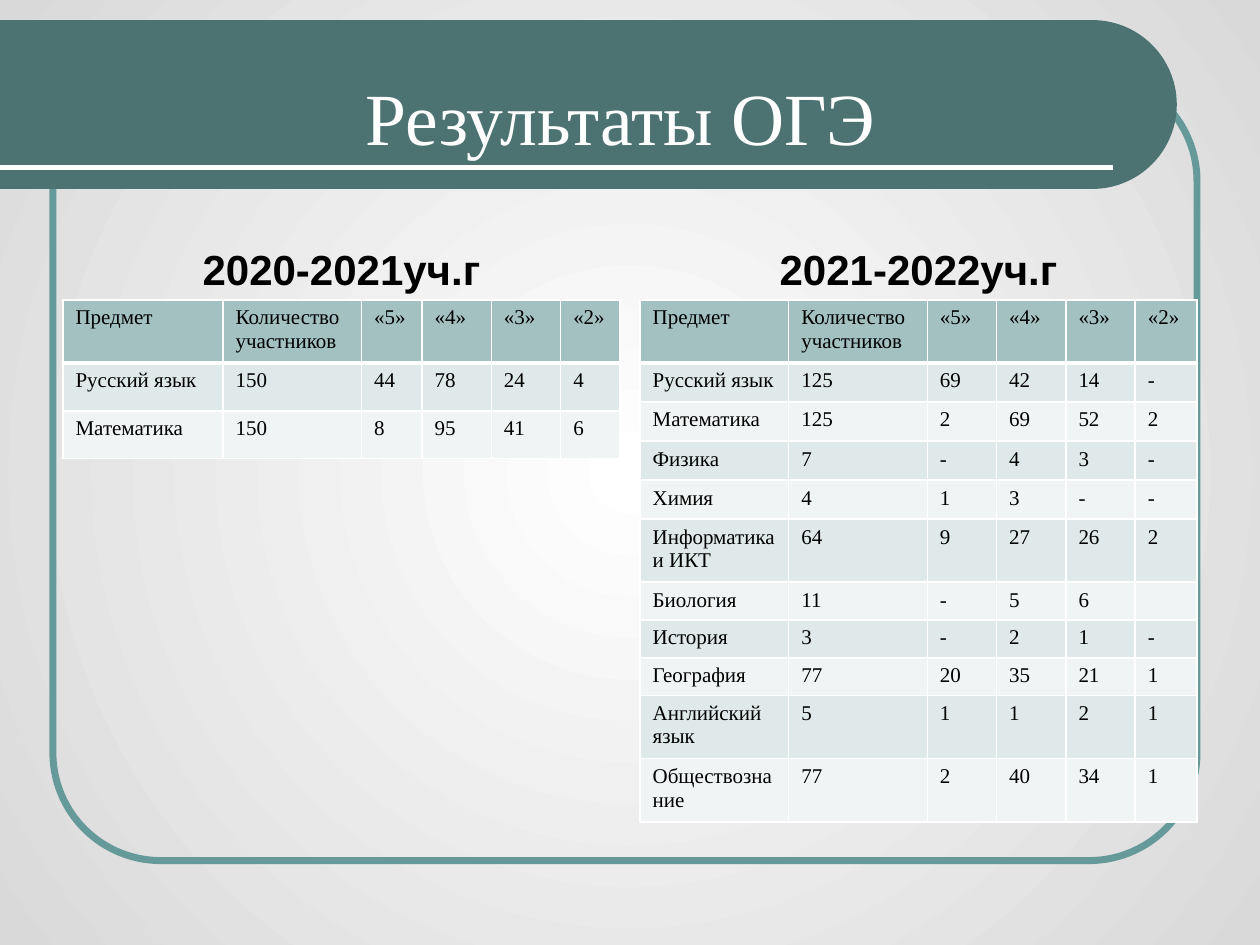
"""Build the slide comparing exam results of two school years."""
from dataclasses import dataclass
from math import cos, pi, sin

from lxml.etree import SubElement
from pptx import Presentation
from pptx.dml.color import RGBColor
from pptx.enum.shapes import MSO_CONNECTOR as Connector, MSO_SHAPE as Shape
from pptx.enum.text import MSO_ANCHOR as Anchor, PP_ALIGN as Align
from pptx.oxml import parse_xml
from pptx.oxml.ns import nsdecls, qn
from pptx.util import Inches, Pt

WHITE = RGBColor(0xFF, 0xFF, 0xFF)
BLACK = RGBColor(0, 0, 0)
GRAY = RGBColor(0xD9, 0xD9, 0xD9)
FRAME = RGBColor(0x66, 0x99, 0x99)
BAND = RGBColor(0x4C, 0x72, 0x72)
HEADER_FILL = RGBColor(0xA3, 0xC1, 0xC1)
ROW_FILLS = (RGBColor(0xE0, 0xE9, 0xE9), RGBColor(0xF0, 0xF4, 0xF4))
SERIF = "Times New Roman"
SANS = "Arial"
HEADER = ("Предмет", "Количество участников", "«5»", "«4»", "«3»", "«2»")


@dataclass(frozen=True)
class YearResults:
    """Heading, grid and marks of one school year."""
    heading: str
    left: float
    widths: tuple[float, ...]
    heights: tuple[float, ...]
    rows: tuple[tuple[str, ...], ...]


YEARS = (
    YearResults(
        "2020-2021уч.г", 0.5, (1.27, 1.1, 0.48, 0.55, 0.55, 0.47), (0.48, 0.38, 0.38),
        (("Русский язык", "150", "44", "78", "24", "4"),
         ("Математика", "150", "8", "95", "41", "6"))),
    YearResults(
        "2021-2022уч.г", 5.08, (1.18, 1.1, 0.55, 0.55, 0.55, 0.49),
        (0.49, 0.31, 0.31, 0.31, 0.31, 0.49, 0.29, 0.29, 0.29, 0.47, 0.47),
        (("Русский язык", "125", "69", "42", "14", "-"),
         ("Математика", "125", "2", "69", "52", "2"),
         ("Физика", "7", "-", "4", "3", "-"),
         ("Химия", "4", "1", "3", "-", "-"),
         ("Информатика и ИКТ", "64", "9", "27", "26", "2"),
         ("Биология", "11", "-", "5", "6", ""),
         ("История", "3", "-", "2", "1", "-"),
         ("География", "77", "20", "35", "21", "1"),
         ("Английский язык", "5", "1", "1", "2", "1"),
         ("Обществознание", "77", "2", "40", "34", "1"))),
)


def set_background(slide) -> None:
    """Fill the background with a radial gradient."""
    fill = slide.background.fill
    fill.gradient()
    for stop, color in zip(fill.gradient_stops, (WHITE, GRAY)):
        stop.color.rgb = color
    gradient = slide.element.find(".//" + qn("a:gradFill"))
    gradient.replace(gradient.find(qn("a:lin")), parse_xml(
        f'<a:path {nsdecls("a")} path="circle">'
        '<a:fillToRect l="50000" t="50000" r="50000" b="50000"/></a:path>'))


def add_frame(slide) -> None:
    """Draw the rounded outline."""
    frame = slide.shapes.add_shape(
        Shape.ROUNDED_RECTANGLE, Inches(0.42), Inches(0.58), Inches(9.08), Inches(6.25))
    frame.adjustments[0] = 0.137
    frame.shadow.inherit = False
    frame.fill.background()
    frame.line.color.rgb = FRAME
    frame.line.width = Pt(4)


def add_band(slide) -> None:
    """Draw the title band with its semicircular end and the rule on it."""
    center_x, center_y, radius, steps = 8.67, 0.83, 0.67, 60
    angles = [pi * step / steps - pi / 2 for step in range(steps + 1)]
    arc = [(Inches(center_x + radius * cos(angle)), Inches(center_y + radius * sin(angle)))
           for angle in angles]
    builder = slide.shapes.build_freeform(0, Inches(center_y - radius))
    builder.add_line_segments(arc + [(0, Inches(center_y + radius))], close=True)
    band = builder.convert_to_shape()
    band.shadow.inherit = False
    band.fill.solid()
    band.fill.fore_color.rgb = BAND
    band.line.fill.background()

    rule = slide.shapes.add_connector(
        Connector.STRAIGHT, 0, Inches(1.33), Inches(8.83), Inches(1.33))
    rule.line.color.rgb = WHITE
    rule.line.width = Pt(3)
    SubElement(rule.element.spPr, qn("a:effectLst"))


def style_font(paragraph, name: str, size: float, color: RGBColor, bold: bool = False) -> None:
    """Set the font of a paragraph."""
    font = paragraph.font
    font.name, font.size, font.bold = name, Pt(size), bold
    font.color.rgb = color


def add_text(slide, text: str, box: tuple[float, ...], anchor: Anchor, name: str,
             size: float, color: RGBColor, bold: bool = False) -> None:
    """Add a centred line of text."""
    frame = slide.shapes.add_textbox(*map(Inches, box)).text_frame
    frame.word_wrap = True
    frame.vertical_anchor = anchor
    paragraph = frame.paragraphs[0]
    paragraph.text = text
    paragraph.alignment = Align.CENTER
    style_font(paragraph, name, size, color, bold)


def set_borders(cell, top: float, bottom: float) -> None:
    """Give a cell white borders."""
    properties = cell._tc.get_or_add_tcPr()
    sides = {"lnL": 1, "lnR": 1, "lnT": top, "lnB": bottom}
    for index, (side, width) in enumerate(sides.items()):
        properties.insert(index, parse_xml(
            f'<a:{side} {nsdecls("a")} w="{Pt(width)}"><a:solidFill>'
            f'<a:srgbClr val="{WHITE}"/></a:solidFill></a:{side}>'))


def add_results(slide, year: YearResults) -> None:
    """Add the heading and table of one school year."""
    width = sum(year.widths)
    add_text(slide, year.heading, (year.left, 1.68, width, 0.7),
             Anchor.BOTTOM, SANS, 24, BLACK, bold=True)
    rows = (HEADER, *year.rows)
    table = slide.shapes.add_table(
        len(rows), len(HEADER), Inches(year.left), Inches(2.38),
        Inches(width), Inches(sum(year.heights))).table
    for column, column_width in zip(table.columns, year.widths):
        column.width = Inches(column_width)
    for index, (values, height) in enumerate(zip(rows, year.heights)):
        table.rows[index].height = Inches(height)
        for cell, value in zip(table.rows[index].cells, values):
            cell.text = value
            style_font(cell.text_frame.paragraphs[0], SERIF, 12, BLACK)
            cell.fill.solid()
            cell.fill.fore_color.rgb = ROW_FILLS[(index - 1) % 2] if index else HEADER_FILL
            set_borders(cell, top=3 if index == 1 else 1, bottom=1 if index else 3)


def main() -> None:
    """Create and save the presentation."""
    presentation = Presentation()
    presentation.slide_width, presentation.slide_height = Inches(10), Inches(7.5)
    slide = presentation.slides.add_slide(presentation.slide_layouts[6])
    set_background(slide)
    add_frame(slide)
    add_band(slide)
    add_text(slide, "Результаты ОГЭ ", (0.5, 0.3, 9, 1.25), Anchor.MIDDLE, SERIF, 42, WHITE)
    for year in YEARS:
        add_results(slide, year)
    presentation.save("out.pptx")


if __name__ == "__main__":
    main()
